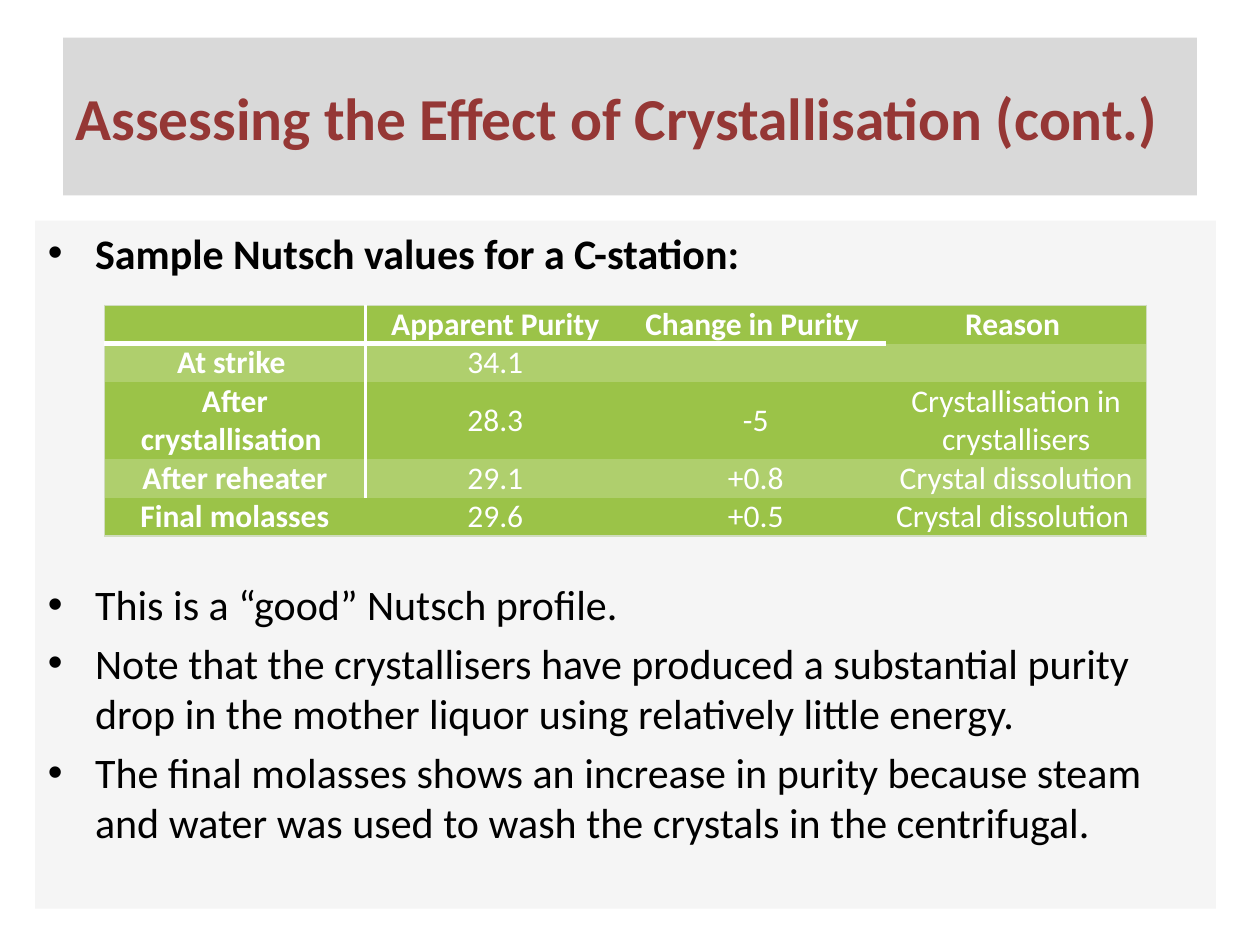
import pptx
import pptx.util
import pptx.dml.color
import pptx.enum.text
import pptx.oxml
import pptx.oxml.ns
from lxml import etree

Cm, Pt = pptx.util.Cm, pptx.util.Pt
ANCHOR, ALIGN = pptx.enum.text.MSO_ANCHOR, pptx.enum.text.PP_ALIGN
qn = pptx.oxml.ns.qn

THEME = {
    "font": "Calibri", "title_pt": 34, "body_pt": 24, "table_pt": 18,
    "title": "953735", "title_fill": "D9D9D9",
    "text": "000000", "body_fill": "F2F2F2",
    "table_text": "FFFFFF", "rule": "FFFFFF", "edge": "D0DCBF",
    "row": "9BC348", "row_light": "AFCF6D",
}


def style(paragraph, size, color, bold):
    font = paragraph.font
    font.name, font.size, font.bold = THEME["font"], Pt(THEME[size]), bold
    font.color.rgb = pptx.dml.color.RGBColor.from_string(THEME[color])


def paint(target, color):
    target.fill.solid()
    target.fill.fore_color.rgb = pptx.dml.color.RGBColor.from_string(THEME[color])


deck = pptx.Presentation()
deck.slide_width, deck.slide_height = Cm(25.4), Cm(19.05)
slide = deck.slides.add_slide(deck.slide_layouts[1])

# Title
heading = slide.shapes.title
heading.left, heading.top, heading.width, heading.height = Cm(1.27), Cm(0.76), Cm(22.86), Cm(3.18)
paint(heading, "title_fill")
heading.text_frame.text = "Assessing the Effect of Crystallisation (cont.)"
heading.text_frame.auto_size = pptx.enum.text.MSO_AUTO_SIZE.NONE
heading.text_frame.vertical_anchor = ANCHOR.MIDDLE
heading.text_frame.paragraphs[0].alignment = ALIGN.LEFT
style(heading.text_frame.paragraphs[0], "title_pt", "title", True)

# Bullet list, with a gap after the first point for the table
points = slide.placeholders[1]
points.left, points.top, points.width, points.height = Cm(0.71), Cm(4.45), Cm(23.8), Cm(13.87)
paint(points, "body_fill")
fill_color = points.fill._xPr.find(qn("a:solidFill"))[0]
etree.SubElement(fill_color, qn("a:alpha"), val="75000")
points.text_frame.text = "\n".join([
    "Sample Nutsch values for a C-station:",
    "This is a “good” Nutsch profile.",
    "Note that the crystallisers have produced a substantial purity drop in the "
    "mother liquor using relatively little energy.",
    "The final molasses shows an increase in purity because steam and water was "
    "used to wash the crystals in the centrifugal.",
])
points.text_frame.auto_size = pptx.enum.text.MSO_AUTO_SIZE.NONE
for point, gap in zip(points.text_frame.paragraphs, (0, 172, 4.8, 4.8)):
    point.space_before = Pt(gap)
    style(point, "body_pt", "text", gap == 0)

# Table of purities
purities = [
    ["", "Apparent Purity", "Change in Purity ", "Reason "],
    ["At strike ", "34.1", "", ""],
    ["After crystallisation ", "28.3", "-5", "Crystallisation in crystallisers"],
    ["After reheater", "29.1", "+0.8", "Crystal dissolution"],
    ["Final molasses", "29.6", "+0.5", "Crystal dissolution "],
]
last_row, last_col = len(purities) - 1, len(purities[0]) - 1
row_heights = [0.77, 0.77, 1.55, 0.77, 0.77]
frame = slide.shapes.add_table(last_row + 1, last_col + 1, Cm(2.11), Cm(6.15),
                               Cm(21), Cm(sum(row_heights)))
table = frame.table
# "No Style, No Grid" leaves all fills and borders to the cells
table._tbl.tblPr.find(qn("a:tableStyleId")).text = "{2D5ABB26-0587-4C30-8999-92F81FD0307C}"

for column in table.columns:
    column.width = Cm(5.25)
for r, (values, height) in enumerate(zip(purities, row_heights)):
    table.rows[r].height = Cm(height)
    for c, value in enumerate(values):
        cell = table.cell(r, c)
        cell.text = value
        cell.vertical_anchor = ANCHOR.MIDDLE
        cell.margin_left = cell.margin_right = Cm(0.18)
        cell.margin_top = cell.margin_bottom = 0
        paint(cell, "row_light" if r % 2 else "row")
        entry = cell.text_frame.paragraphs[0]
        entry.alignment = ALIGN.CENTER
        style(entry, "table_pt", "table_text", r == 0 or c == 0)

        # Pale outer edge, white rules beside the labels and under the header
        borders = {}
        if c == 0:
            borders["lnL"] = ("edge", 0.75)
        if c == last_col:
            borders["lnR"] = ("edge", 0.75)
        elif c == 0 and r < last_row:
            borders["lnR"] = ("rule", 2)
        if r == 0:
            borders["lnT"] = ("edge", 0.75)
        if r == last_row:
            borders["lnB"] = ("edge", 0.75)
        elif r == 0 and c < last_col:
            borders["lnB"] = ("rule", 3)
        for place, (side, (color, width)) in enumerate(borders.items()):
            line = etree.Element(qn(f"a:{side}"), w=str(Pt(width)))
            solid = etree.SubElement(line, qn("a:solidFill"))
            etree.SubElement(solid, qn("a:srgbClr"), val=THEME[color])
            cell._tc.tcPr.insert(place, line)

deck.save("out.pptx")
